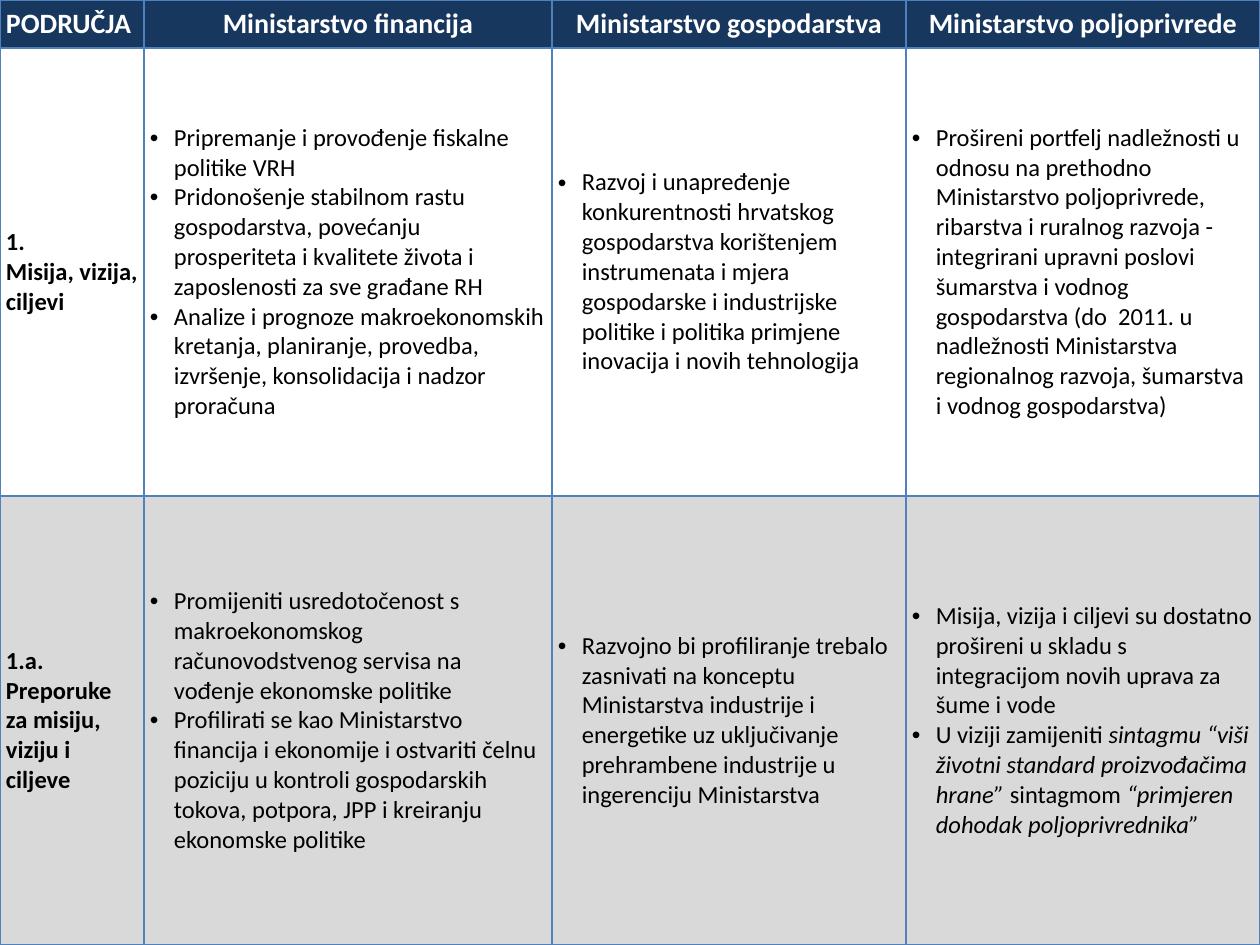
from dataclasses import dataclass
from typing import NamedTuple

from lxml import etree
from pptx import Presentation
from pptx import util as u
from pptx.dml import color
from pptx.enum import text
from pptx.oxml import ns

EMU_PER_PX = 914400 // 126
SLIDE_WIDTH, SLIDE_HEIGHT = 1260, 945
COLUMN_WIDTHS = (144, 408, 354, 354)
ROW_HEIGHTS = (48, 448, 449)
CELL_INSET = 6
BULLET_INDENT = 24


@dataclass(frozen=True)
class Theme:
    font: str = "Calibri"
    header_size: int = 16
    body_size: int = 14
    header_fill: str = "17375E"
    header_text: str = "FFFFFF"
    body_text: str = "000000"
    shaded_fill: str = "D9D9D9"
    border: str = "4F81BD"
    border_width: int = 1
    header_spacing: int = 6


class Span(NamedTuple):
    words: str
    italic: bool = False


class Paragraph(NamedTuple):
    spans: tuple[Span, ...]


class Area(NamedTuple):
    label: tuple[str, ...]
    ministries: tuple[tuple[Paragraph, ...], ...]
    fill: str | None


class Style(NamedTuple):
    size: int
    ink: str
    bold: bool = False
    centred: bool = False
    bulleted: bool = False
    spacing: int = 0


THEME = Theme()
HEADER = Style(THEME.header_size, THEME.header_text, bold=True, spacing=THEME.header_spacing)
LABEL = Style(THEME.body_size, THEME.body_text, bold=True)
BULLETS = Style(THEME.body_size, THEME.body_text, bulleted=True)


def px(length: int) -> u.Emu:
    return u.Emu(round(length * EMU_PER_PX))


def plain(*lines: str) -> tuple[Paragraph, ...]:
    return tuple(Paragraph((Span(line),)) for line in lines)


HEADINGS = (
    "PODRUČJA",
    "Ministarstvo financija",
    "Ministarstvo gospodarstva",
    "Ministarstvo poljoprivrede",
)
AREAS = (
    Area(
        ("1.", "Misija, vizija, ciljevi"),
        (
            plain(
                "Pripremanje i provođenje fiskalne politike VRH",
                "Pridonošenje stabilnom rastu gospodarstva, povećanju prosperiteta "
                "i kvalitete života i zaposlenosti za sve građane RH",
                "Analize i prognoze makroekonomskih kretanja, planiranje, provedba, "
                "izvršenje, konsolidacija i nadzor proračuna",
            ),
            plain(
                "Razvoj i unapređenje konkurentnosti hrvatskog gospodarstva korištenjem "
                "instrumenata i mjera gospodarske i industrijske politike i politika "
                "primjene inovacija i novih tehnologija"
            ),
            plain(
                "Prošireni portfelj nadležnosti u odnosu na prethodno Ministarstvo "
                "poljoprivrede, ribarstva i ruralnog razvoja - integrirani upravni poslovi "
                "šumarstva i vodnog gospodarstva (do  2011. u nadležnosti Ministarstva "
                "regionalnog razvoja, šumarstva i vodnog gospodarstva)"
            ),
        ),
        None,
    ),
    Area(
        ("1.a.", "Preporuke za misiju, viziju i ciljeve"),
        (
            plain(
                "Promijeniti usredotočenost s makroekonomskog računovodstvenog servisa "
                "na vođenje ekonomske politike",
                "Profilirati se kao Ministarstvo financija i ekonomije i ostvariti čelnu "
                "poziciju u kontroli gospodarskih tokova, potpora, JPP i kreiranju "
                "ekonomske politike",
            ),
            plain(
                "Razvojno bi profiliranje trebalo zasnivati na konceptu Ministarstva "
                "industrije i energetike uz uključivanje prehrambene industrije u "
                "ingerenciju Ministarstva"
            ),
            plain(
                "Misija, vizija i ciljevi su dostatno prošireni u skladu s integracijom "
                "novih uprava za šume i vode"
            )
            + (
                Paragraph(
                    (
                        Span("U viziji zamijeniti "),
                        Span("sintagmu “viši životni standard proizvođačima hrane” ", True),
                        Span("sintagmom "),
                        Span("“primjeren dohodak poljoprivrednika”", True),
                    )
                ),
            ),
        ),
        THEME.shaded_fill,
    ),
)


def add_borders(cell) -> None:
    properties = cell._tc.get_or_add_tcPr()
    for position, side in enumerate(("lnL", "lnR", "lnT", "lnB")):
        line = etree.Element(ns.qn(f"a:{side}"), w=str(u.Pt(THEME.border_width)))
        fill = etree.SubElement(line, ns.qn("a:solidFill"))
        etree.SubElement(fill, ns.qn("a:srgbClr"), val=THEME.border)
        properties.insert(position, line)


def add_bullet(para) -> None:
    properties = para._p.get_or_add_pPr()
    properties.set("marL", str(px(BULLET_INDENT)))
    properties.set("indent", str(-px(BULLET_INDENT)))
    etree.SubElement(properties, ns.qn("a:buFont"), typeface="Arial")
    etree.SubElement(properties, ns.qn("a:buChar"), char="•")


def write_paragraph(para, content: Paragraph, style: Style) -> None:
    para.alignment = text.PP_ALIGN.CENTER if style.centred else text.PP_ALIGN.LEFT
    para.space_before = para.space_after = u.Pt(style.spacing)
    if style.bulleted:
        add_bullet(para)
    para.font.name = THEME.font
    para.font.size = u.Pt(style.size)
    para.font.bold = style.bold
    para.font.color.rgb = color.RGBColor.from_string(style.ink)
    for span in content.spans:
        run = para.add_run()
        run.text = span.words
        if span.italic:
            run.font.italic = True


def fill_cell(cell, paragraphs: tuple[Paragraph, ...], style: Style, fill: str | None) -> None:
    cell.vertical_anchor = text.MSO_ANCHOR.MIDDLE
    cell.margin_left = cell.margin_right = px(CELL_INSET)
    cell.margin_top = cell.margin_bottom = 0
    if fill:
        cell.fill.solid()
        cell.fill.fore_color.rgb = color.RGBColor.from_string(fill)
    else:
        cell.fill.background()
    add_borders(cell)
    frame = cell.text_frame
    for index, content in enumerate(paragraphs):
        para = frame.add_paragraph() if index else frame.paragraphs[0]
        write_paragraph(para, content, style)


def main() -> None:
    deck = Presentation()
    deck.slide_width, deck.slide_height = px(SLIDE_WIDTH), px(SLIDE_HEIGHT)
    page = deck.slides.add_slide(deck.slide_layouts[6])
    table = page.shapes.add_table(
        len(ROW_HEIGHTS), len(COLUMN_WIDTHS), 0, 0, px(SLIDE_WIDTH), px(SLIDE_HEIGHT)
    ).table
    table.first_row = table.horz_banding = False
    for column, width in zip(table.columns, COLUMN_WIDTHS):
        column.width = px(width)
    for row, height in zip(table.rows, ROW_HEIGHTS):
        row.height = px(height)
    for index, heading in enumerate(HEADINGS):
        style = HEADER._replace(centred=index > 0)
        fill_cell(table.cell(0, index), plain(heading), style, THEME.header_fill)
    for row_index, area in enumerate(AREAS, start=1):
        fill_cell(table.cell(row_index, 0), plain(*area.label), LABEL, area.fill)
        for column_index, paragraphs in enumerate(area.ministries, start=1):
            fill_cell(table.cell(row_index, column_index), paragraphs, BULLETS, area.fill)
    deck.save("out.pptx")


if __name__ == "__main__":
    main()
